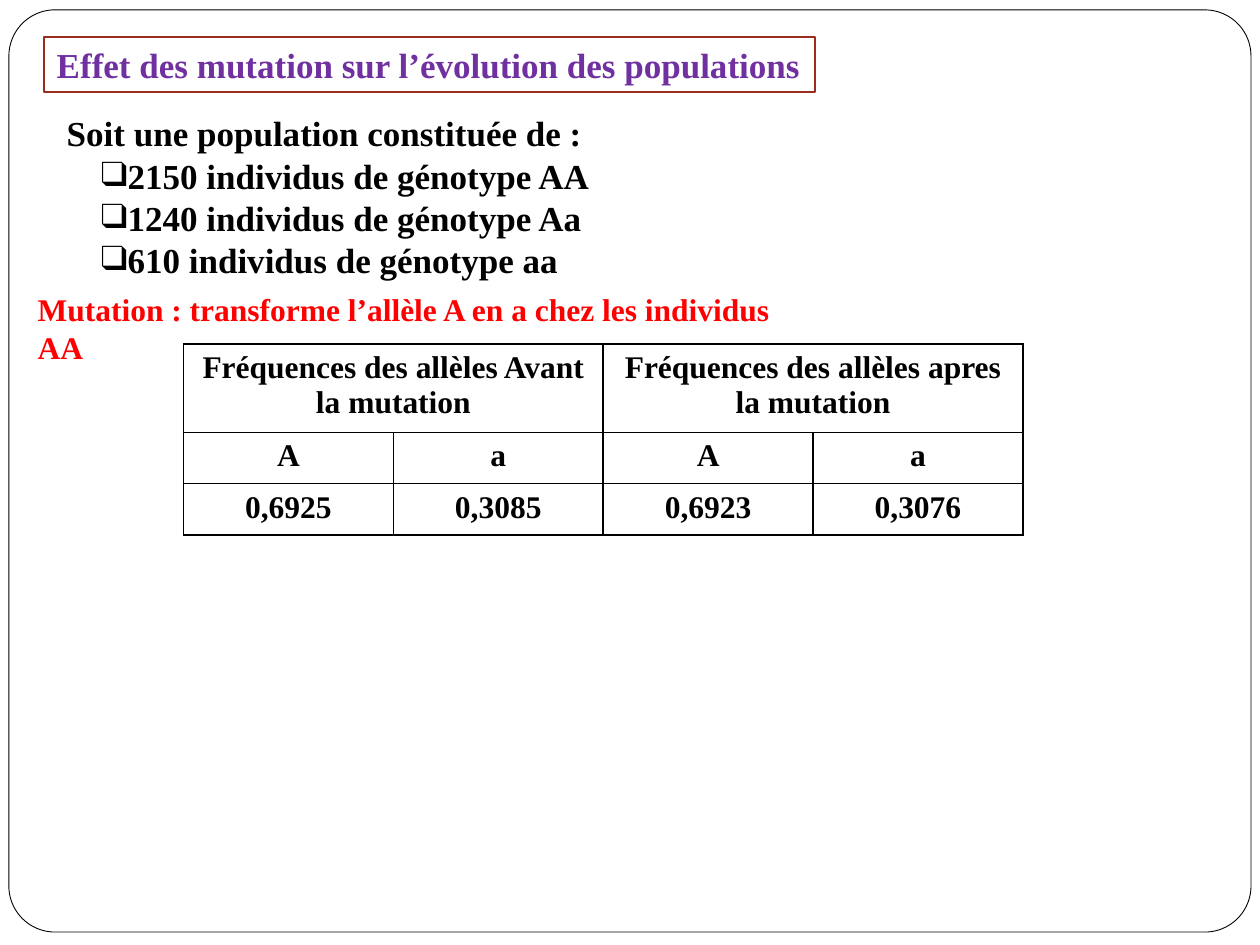
from lxml.etree import SubElement
from pptx import Presentation
from pptx.dml.color import RGBColor
from pptx.enum.shapes import MSO_SHAPE
from pptx.enum.text import MSO_ANCHOR, MSO_AUTO_SIZE, PP_ALIGN
from pptx.oxml.ns import qn
from pptx.util import Cm, Pt

# Content
TITLE = "Effet des mutation sur l’évolution des populations"
INTRO = "Soit une population constituée de :"
GENOTYPES = [
    "2150 individus de génotype AA",
    "1240 individus de génotype Aa",
    "610 individus de génotype aa",
]
MUTATION = "Mutation : transforme l’allèle A en a chez les individus AA"
HEADINGS = ["Fréquences des allèles Avant la mutation",
            "Fréquences des allèles apres la mutation"]
ROWS = [
    ["A", "a", "A", "a"],
    ["0,6925", "0,3085", "0,6923", "0,3076"],
]

FONT = "Times New Roman"
COLORS = {"text": "000000", "title": "7030A0", "border": "9B2D1F",
          "mutation": "FF0000", "paper": "FFFFFF"}
COLUMN_WIDTH = 4.23
ROW_HEIGHTS = [1.79, 1.03, 1.03]


def rgb(name):
    return RGBColor.from_string(COLORS[name])


def place(box, left, top, width, height):
    box.left, box.top, box.width, box.height = map(Cm, (left, top, width, height))


def format_text(frame, size, color, align=PP_ALIGN.LEFT):
    for para in frame.paragraphs:
        para.alignment = align
        para.space_before = Pt(0)
        for span in para.runs:
            span.font.name = FONT
            span.font.size = Pt(size)
            span.font.bold = True
            span.font.color.rgb = rgb(color)


def set_bullet(para, symbol, margin):
    properties = para._p.get_or_add_pPr()
    properties.set("marL", str(Cm(margin)))
    properties.set("indent", "0")
    if symbol:
        SubElement(properties, qn("a:buFont"), typeface=FONT)
        SubElement(properties, qn("a:buChar"), char=symbol)
    else:
        SubElement(properties, qn("a:buNone"))


def style_cell(cell):
    properties = cell._tc.get_or_add_tcPr()
    for side in ("lnL", "lnR", "lnT", "lnB"):
        line = SubElement(properties, qn("a:" + side), w=str(Pt(1)))
        fill = SubElement(line, qn("a:solidFill"))
        SubElement(fill, qn("a:srgbClr"), val=COLORS["text"])
    cell.fill.background()
    format_text(cell.text_frame, 18, "text", PP_ALIGN.CENTER)


deck = Presentation()
deck.slide_width, deck.slide_height = Cm(25.4), Cm(19.05)
page = deck.slides.add_slide(deck.slide_layouts[1])
title, body = page.placeholders

# Rounded page frame, sent behind everything
border = page.shapes.add_shape(MSO_SHAPE.ROUNDED_RECTANGLE,
                               Cm(0.18), Cm(0.2), Cm(25.04), Cm(18.59))
border.adjustments[0] = 0.05
border.shadow.inherit = False
border.fill.solid()
border.fill.fore_color.rgb = rgb("paper")
border.line.color.rgb = rgb("text")
border.line.width = Pt(0.5)
page.shapes._spTree.insert(2, border._element)

# Title
place(title, 0.89, 0.74, 15.54, 1.11)
title.text_frame.text = TITLE
title.text_frame.word_wrap = False
title.text_frame.auto_size = MSO_AUTO_SIZE.NONE
title.text_frame.vertical_anchor = MSO_ANCHOR.TOP
title.fill.solid()
title.fill.fore_color.rgb = rgb("paper")
title.line.color.rgb = rgb("border")
title.line.width = Pt(1)
format_text(title.text_frame, 20, "title")

# Population list
place(body, 1.09, 2.13, 11.99, 4.52)
body.text_frame.text = "\n".join([INTRO] + GENOTYPES)
body.text_frame.auto_size = MSO_AUTO_SIZE.NONE
format_text(body.text_frame, 20, "text")
intro, *items = body.text_frame.paragraphs
set_bullet(intro, None, 0)
for item in items:
    item.level = 1
    set_bullet(item, "❑", 0.69)

# Mutation statement
note = page.shapes.add_textbox(Cm(0.51), Cm(5.72), Cm(16.21), Cm(1.02))
note.text_frame.word_wrap = True
note.text_frame.text = MUTATION
format_text(note.text_frame, 18, "mutation")

# Allele frequency table
columns = len(ROWS[0])
table = page.shapes.add_table(len(ROW_HEIGHTS), columns, Cm(3.7), Cm(6.93),
                              Cm(COLUMN_WIDTH * columns), Cm(sum(ROW_HEIGHTS))).table
for column in table.columns:
    column.width = Cm(COLUMN_WIDTH)
for row, height in zip(table.rows, ROW_HEIGHTS):
    row.height = Cm(height)
for index, heading in enumerate(HEADINGS):
    first = table.cell(0, 2 * index)
    first.merge(table.cell(0, 2 * index + 1))
    first.text_frame.text = heading
for r, values in enumerate(ROWS, start=1):
    for c, value in enumerate(values):
        table.cell(r, c).text_frame.text = value
for cell in table.iter_cells():
    style_cell(cell)

deck.save("out.pptx")
